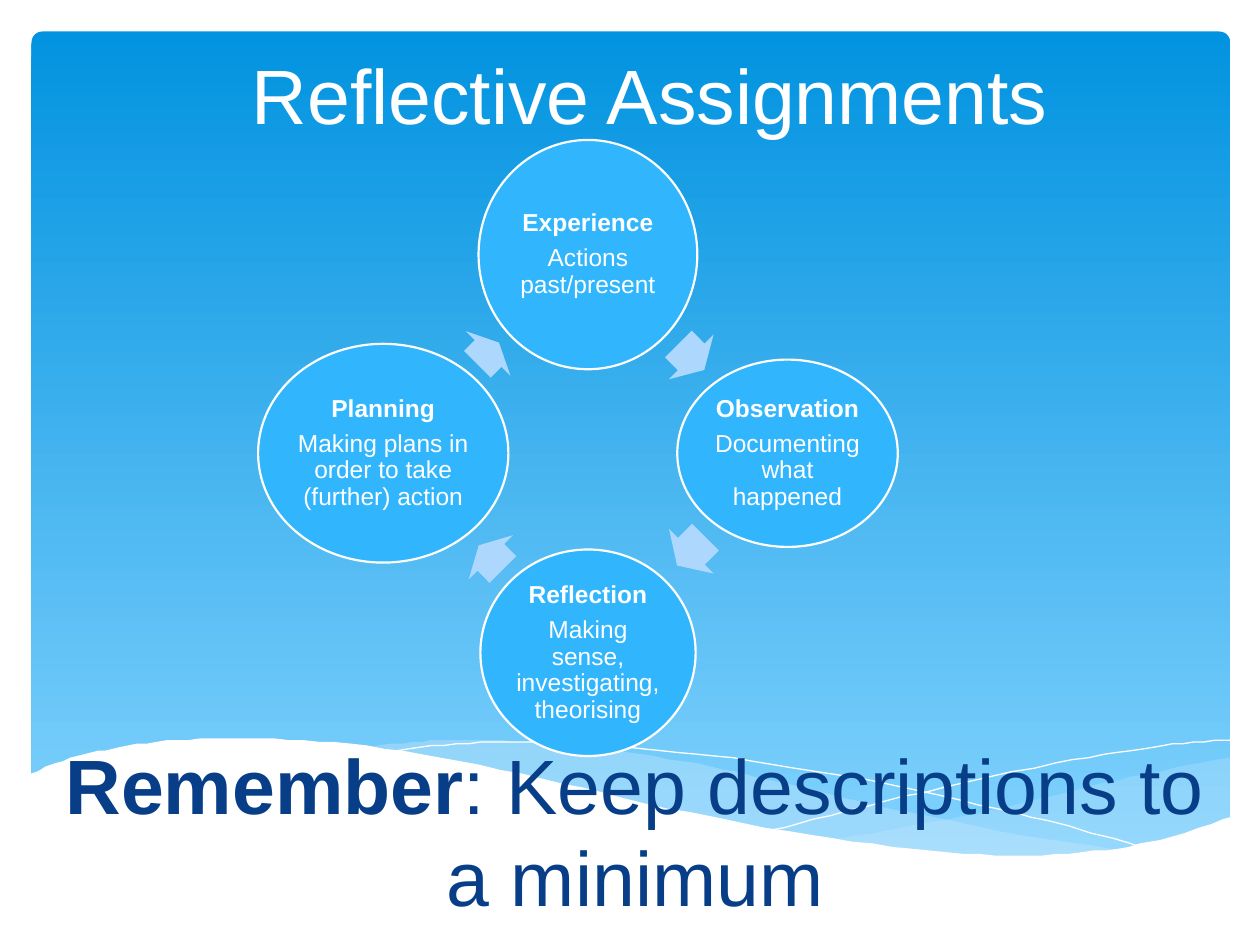
import dataclasses
import math

import pptx
import pptx.dml.color
import pptx.enum.shapes
import pptx.enum.text
import pptx.oxml.ns
import pptx.util
from lxml import etree

Pt = pptx.util.Pt
SHAPES = pptx.enum.shapes.MSO_SHAPE
ALIGN = pptx.enum.text.PP_ALIGN
ANCHOR = pptx.enum.text.MSO_ANCHOR


@dataclasses.dataclass(frozen=True)
class Theme:
    font: str = "Arial"
    heading_size: int = 44
    stage_size: int = 14
    white: str = "FFFFFF"
    navy: str = "073E87"
    sky_top: str = "0293E0"
    sky_bottom: str = "83D3FE"
    mist: str = "C6E7FC"
    stage: str = "31B6FD"
    arrow: str = "AED7FE"


THEME = Theme()

# Wave edges, in points from the corner of the wave region
NEAR_BAND = [
    [(686.4, 10.7), (636, 20.8), (603.6, 28), (563, 38), (526, 46), (459.6, 58)],
    [(459.6, 58), (491, 62.6), (520, 65.4), (554, 66.9), (585, 66.9),
     (611.6, 64.7), (636, 61.1), (657.6, 55.4), (686.4, 45.3)],
]
LONG_BAND = [
    [(189.6, 5), (219, 2.1), (243.6, 0.6), (271, 1.4), (301, 3.5), (335, 7.1),
     (373, 12.9), (414.3, 21.5), (464.7, 33.8), (517, 45.3), (564.8, 54.6), (626.7, 64)],
    [(626.7, 64), (594.3, 66.9), (556.8, 67.6), (522.3, 66.2), (484, 61.8),
     (440, 55.4), (391, 46), (336.5, 34.5), (290.4, 23), (244.4, 12.9),
     (202.6, 6.4), (189.6, 5)],
]
SINKING_LINE = [
    [(206, 7.8), (237, 3.5), (272.4, 2.1), (307.7, 2.1), (351, 5.7), (402, 11.4),
     (462.5, 20.8), (531, 35.2), (582, 47.4), (636.8, 62.6)],
]
RISING_LINE = [
    [(425, 52.5), (467.6, 41), (522.3, 28), (585.6, 14.3), (629, 7.1),
     (659, 2.8), (685.7, 0.6)],
]
FOREGROUND = [
    [(686.4, 44.6), (652.6, 56.1), (621.6, 62.6), (585.6, 66.2), (543.2, 66.2),
     (492.8, 61.8), (433.7, 53.2), (363.9, 39.5), (304.8, 25.8), (245.8, 12.9),
     (193.2, 4.2), (148.6, 0.6), (110.4, 0), (78, 1.4), (51.4, 5), (31.2, 9.3),
     (11.8, 15), (0, 20.8)],
    [(0, 104.5), (686.4, 104.5)],
]

# Heading, detail, distance from the cycle's centre, width, height
STAGES = [
    ("Experience", "Actions past/present", 113.5, 125, 131),
    ("Observation", "Documenting what happened", 114, 126, 107),
    ("Reflection", "Making sense, investigating, theorising", 114, 123, 118),
    ("Planning", "Making plans in order to take (further) action", 117, 143, 125),
]
# Offset from the cycle's centre, length
ARROWS = [(59, -55, 21), (59, 56, 23), (-55.5, 59.5, 19.5), (-57, -57, 17.5)]
ARROW_BREADTH = 36


def rgb(code):
    return pptx.dml.color.RGBColor.from_string(code)


def style_run(run, size, color, bold=False):
    run.font.name = THEME.font
    run.font.size = Pt(size)
    run.font.color.rgb = rgb(color)
    run.font.bold = bold


def paint(shape, fill, opacity=100):
    shape.shadow.inherit = False
    shape.fill.solid()
    shape.fill.fore_color.rgb = rgb(fill)
    shape.line.fill.background()
    if opacity < 100:
        color = shape.fill._xPr.find(".//" + pptx.oxml.ns.qn("a:srgbClr"))
        alpha = etree.SubElement(color, pptx.oxml.ns.qn("a:alpha"))
        alpha.set("val", str(opacity * 1000))


def smooth(points, steps=5):
    """Return points along a Catmull-Rom curve through the given points."""
    padded = [points[0], *points, points[-1]]
    curve = [points[0]]
    for p, q, r, s in zip(padded, padded[1:], padded[2:], padded[3:]):
        for step in range(1, steps + 1):
            t = step / steps
            curve.append(tuple(
                0.5 * (2 * b + (c - a) * t + (2 * a - 5 * b + 4 * c - d) * t ** 2
                       + (3 * b - a - 3 * c + d) * t ** 3)
                for a, b, c, d in zip(p, q, r, s)))
    return curve


def add_wave(slide, left, top, edges, close=True):
    outline = [(left + x, top + y) for edge in edges for x, y in smooth(edge)]
    builder = slide.shapes.build_freeform(*outline[0], scale=Pt(1))
    builder.add_line_segments(outline[1:], close=close)
    return builder.convert_to_shape()


def add_sky(slide, left, top, width, height):
    sky = slide.shapes.add_shape(SHAPES.ROUNDED_RECTANGLE,
                                 Pt(left), Pt(top), Pt(width), Pt(height))
    sky.adjustments[0] = 0.013
    sky.shadow.inherit = False
    sky.line.fill.background()
    sky.fill.gradient()
    sky.fill.gradient_angle = 270
    for stop, color, position in zip(sky.fill.gradient_stops,
                                     (THEME.sky_top, THEME.sky_bottom), (0, 1)):
        stop.color.rgb = rgb(color)
        stop.position = position


def add_waves(slide, left, top):
    for band, opacity in ((NEAR_BAND, 29), (LONG_BAND, 40)):
        paint(add_wave(slide, left, top, band), THEME.mist, opacity)
    for strand in (SINKING_LINE, RISING_LINE):
        thread = add_wave(slide, left, top, strand, close=False)
        thread.shadow.inherit = False
        thread.fill.background()
        thread.line.color.rgb = rgb(THEME.white)
        thread.line.width = Pt(0)
    paint(add_wave(slide, left, top, FOREGROUND), THEME.white)


def fill_heading(slide, heading, box, parts, color, anchor):
    """Place a heading placeholder in front and fill it with (text, bold) parts."""
    slide.shapes._spTree.append(heading._element)
    heading.left, heading.top, heading.width, heading.height = map(Pt, box)
    frame = heading.text_frame
    frame.word_wrap = True
    frame.auto_size = pptx.enum.text.MSO_AUTO_SIZE.NONE
    frame.vertical_anchor = anchor
    paragraph = frame.paragraphs[0]
    paragraph.alignment = ALIGN.CENTER
    for text, bold in parts:
        run = paragraph.add_run()
        run.text = text
        style_run(run, THEME.heading_size, color, bold)


def add_centred(slide, kind, x, y, width, height, fill):
    shape = slide.shapes.add_shape(kind, Pt(x - width / 2), Pt(y - height / 2),
                                   Pt(width), Pt(height))
    paint(shape, fill)
    return shape


def add_stage(slide, x, y, width, height, heading, detail):
    stage = add_centred(slide, SHAPES.OVAL, x, y, width, height, THEME.stage)
    stage.line.color.rgb = rgb(THEME.white)
    stage.line.width = Pt(1.25)
    frame = stage.text_frame
    frame.word_wrap = True
    frame.vertical_anchor = ANCHOR.MIDDLE
    frame.margin_left = frame.margin_right = Pt(1.4)
    frame.margin_top = frame.margin_bottom = Pt(1.4)
    frame.text = f"{heading}\n{detail}"
    for paragraph, bold in zip(frame.paragraphs, (True, False)):
        paragraph.alignment = ALIGN.CENTER
        paragraph.line_spacing = 0.9
        paragraph.space_after = Pt(5)
        style_run(paragraph.runs[0], THEME.stage_size, THEME.white, bold)


def add_cycle(slide, x, y):
    """Draw the stages clockwise from the top around the centre (x, y)."""
    for i, (stage, arrow) in enumerate(zip(STAGES, ARROWS)):
        heading, detail, radius, width, height = stage
        turn = math.radians(90 * i)
        add_stage(slide, x + radius * math.sin(turn), y - radius * math.cos(turn),
                  width, height, heading, detail)
        dx, dy, length = arrow
        pointer = add_centred(slide, SHAPES.RIGHT_ARROW, x + dx, y + dy,
                              length, ARROW_BREADTH, THEME.arrow)
        pointer.adjustments[0] = 0.6
        pointer.rotation = 45 + 90 * i


def main():
    deck = pptx.Presentation()
    deck.slide_width, deck.slide_height = Pt(720), Pt(540)
    slide = deck.slides.add_slide(deck.slide_layouts[0])
    title, reminder = slide.placeholders
    add_sky(slide, 18, 18, 685, 475)
    add_waves(slide, 17, 422)
    fill_heading(slide, title, (65.5, 0, 612, 83.5),
                 [("Reflective Assignments", False)], THEME.white, ANCHOR.BOTTOM)
    fill_heading(slide, reminder, (20, 417.6, 686, 116),
                 [("Remember", True), (": Keep descriptions to a minimum", False)],
                 THEME.navy, ANCHOR.TOP)
    add_cycle(slide, 336, 259)
    deck.save("out.pptx")


if __name__ == "__main__":
    main()
